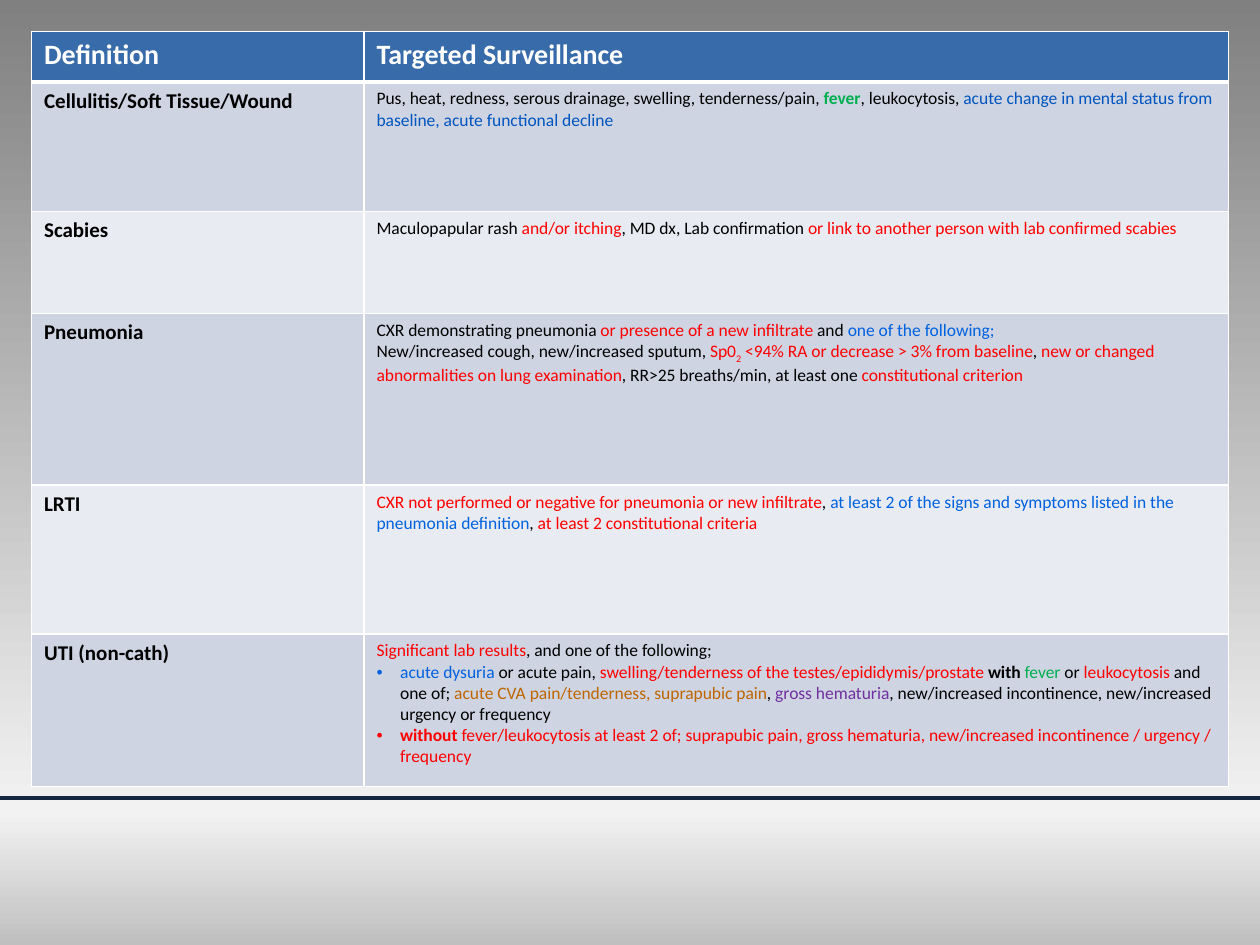
from lxml import etree
from pptx import Presentation
from pptx.dml.color import RGBColor
from pptx.enum.shapes import MSO_CONNECTOR
from pptx.oxml import parse_xml
from pptx.oxml.ns import nsdecls, qn
from pptx.util import Pt

STRAIGHT = MSO_CONNECTOR.STRAIGHT
THEME = {
    "font": "Calibri",
    "header_size": 16, "label_size": 12, "body_size": 10,
    "white": "FFFFFF", "black": "000000", "red": "FF0000", "green": "00B050",
    "navy": "0055BF", "blue": "0062DF", "orange": "BF6600", "purple": "7030A0",
    "rule": "15283F", "header_fill": "386BA9", "bands": ["CED4E2", "E8EBF1"],
    "background": [(0, "808080"), (86, "F2F2F2"), (100, "BFBFBF")],
}
BULLET = "•"
COLUMN_WIDTHS = [190, 494]
ROW_HEIGHTS = [28.8, 74.2, 58.3, 98, 85, 87.2]

# Each definition has paragraphs of (text, colour, optional style) runs;
# a paragraph that opens with BULLET is a list item.
HEADERS = ["Definition", "Targeted Surveillance"]
DEFINITIONS = [
    ("Cellulitis/Soft Tissue/Wound", [[
        ("Pus, heat, redness, serous drainage, swelling, tenderness/pain, ", "black"),
        ("fever", "green", "bold"),
        (", leukocytosis, ", "black"),
        ("acute change in mental status from baseline, acute functional decline", "navy"),
    ]]),
    ("Scabies", [[
        ("Maculopapular rash ", "black"),
        ("and/or itching", "red"),
        (", MD dx, Lab confirmation ", "black"),
        ("or link to another person with lab confirmed scabies", "red"),
    ]]),
    ("Pneumonia", [[
        ("CXR demonstrating pneumonia ", "black"),
        ("or presence of a new infiltrate ", "red"),
        ("and ", "black"),
        ("one of the following;", "blue"),
    ], [
        ("New/increased cough, new/increased sputum, ", "black"),
        ("Sp0", "red"),
        ("2", "red", "subscript"),
        (" <94% RA or decrease > 3% from baseline", "red"),
        (", ", "black"),
        ("new or changed abnormalities on lung examination", "red"),
        (", RR>25 breaths/min, at least one ", "black"),
        ("constitutional criterion", "red"),
    ]]),
    ("LRTI", [[
        ("CXR not performed or negative for pneumonia or new infiltrate", "red"),
        (", ", "black"),
        ("at least 2 of the signs and symptoms listed in the pneumonia definition", "blue"),
        (", ", "black"),
        ("at least 2 constitutional criteria", "red"),
    ]]),
    ("UTI (non-cath)", [[
        ("Significant lab results", "red"),
        (", and one of the following;", "black"),
    ], [
        BULLET,
        ("acute dysuria", "blue"),
        (" or acute pain, ", "black"),
        ("swelling/tenderness of the testes/epididymis/prostate ", "red"),
        ("with ", "black", "bold"),
        ("fever", "green"),
        (" or ", "black"),
        ("leukocytosis", "red"),
        (" and one of; ", "black"),
        ("acute CVA pain/tenderness, suprapubic pain", "orange"),
        (", ", "black"),
        ("gross hematuria", "purple"),
        (", new/increased incontinence, new/increased urgency or frequency", "black"),
    ], [
        BULLET,
        ("without", "red", "bold"),
        (" fever/leukocytosis at least 2 of; suprapubic pain, gross hematuria, "
         "new/increased incontinence / urgency / frequency", "red"),
    ]]),
]


def fill_cell(cell, paragraphs, size, fill, bottom_border=1):
    """Write styled paragraphs into a cell and give it a fill and white borders."""
    for index, runs in enumerate(paragraphs):
        text_frame = cell.text_frame
        paragraph = text_frame.add_paragraph() if index else text_frame.paragraphs[0]
        if runs[0] == BULLET:
            runs = runs[1:]
            properties = paragraph._p.get_or_add_pPr()
            properties.set("marL", str(Pt(13.5)))
            properties.set("indent", str(-Pt(13.5)))
            etree.SubElement(properties, qn("a:buFont")).set("typeface", "Arial")
            etree.SubElement(properties, qn("a:buChar")).set("char", BULLET)
        for text, color, *style in runs:
            run = paragraph.add_run()
            run.text = text
            run.font.name = THEME["font"]
            run.font.size = Pt(size)
            run.font.bold = "bold" in style
            run.font.color.rgb = RGBColor.from_string(THEME[color])
            if "subscript" in style:
                run._r.get_or_add_rPr().set("baseline", "-25000")

    cell.fill.solid()
    cell.fill.fore_color.rgb = RGBColor.from_string(fill)
    borders = [("lnL", 1), ("lnR", 1), ("lnT", 1), ("lnB", bottom_border)]
    for position, (tag, width) in enumerate(borders):
        cell._tc.get_or_add_tcPr().insert(position, parse_xml(
            f'<a:{tag} {nsdecls("a")} w="{Pt(width)}"><a:solidFill>'
            f'<a:srgbClr val="{THEME["white"]}"/></a:solidFill></a:{tag}>'))


presentation = Presentation()
presentation.slide_width = Pt(720)
presentation.slide_height = Pt(540)
slide = presentation.slides.add_slide(presentation.slide_layouts[6])

# Background gradient, top to bottom
background_fill = slide.background.fill
background_fill.gradient()
background_fill.gradient_angle = 270
stop_list = slide._element.find(".//" + qn("a:gsLst"))
for stop in list(stop_list):
    stop_list.remove(stop)
for position, color in THEME["background"]:
    stop = etree.SubElement(stop_list, qn("a:gs"), pos=str(position * 1000))
    etree.SubElement(stop, qn("a:srgbClr"), val=color)

# Footer rule
footer_rule = slide.shapes.add_connector(STRAIGHT, Pt(720), Pt(456), Pt(0), Pt(456))
footer_rule.line.color.rgb = RGBColor.from_string(THEME["rule"])
footer_rule.line.width = Pt(2.25)
etree.SubElement(footer_rule._element.spPr, qn("a:effectLst"))

# Definitions table
table = slide.shapes.add_table(
    len(ROW_HEIGHTS), len(COLUMN_WIDTHS), Pt(18), Pt(18),
    Pt(sum(COLUMN_WIDTHS)), Pt(sum(ROW_HEIGHTS))).table
table.horz_banding = False
for column, width in zip(table.columns, COLUMN_WIDTHS):
    column.width = Pt(width)
for row, height in zip(table.rows, ROW_HEIGHTS):
    row.height = Pt(height)

for column_index, header in enumerate(HEADERS):
    fill_cell(table.cell(0, column_index), [[(header, "white", "bold")]],
              THEME["header_size"], THEME["header_fill"], bottom_border=3)
for index, (label, criteria) in enumerate(DEFINITIONS):
    band = THEME["bands"][index % 2]
    fill_cell(table.cell(index + 1, 0), [[(label, "black", "bold")]],
              THEME["label_size"], band)
    fill_cell(table.cell(index + 1, 1), criteria, THEME["body_size"], band)

presentation.save("out.pptx")
